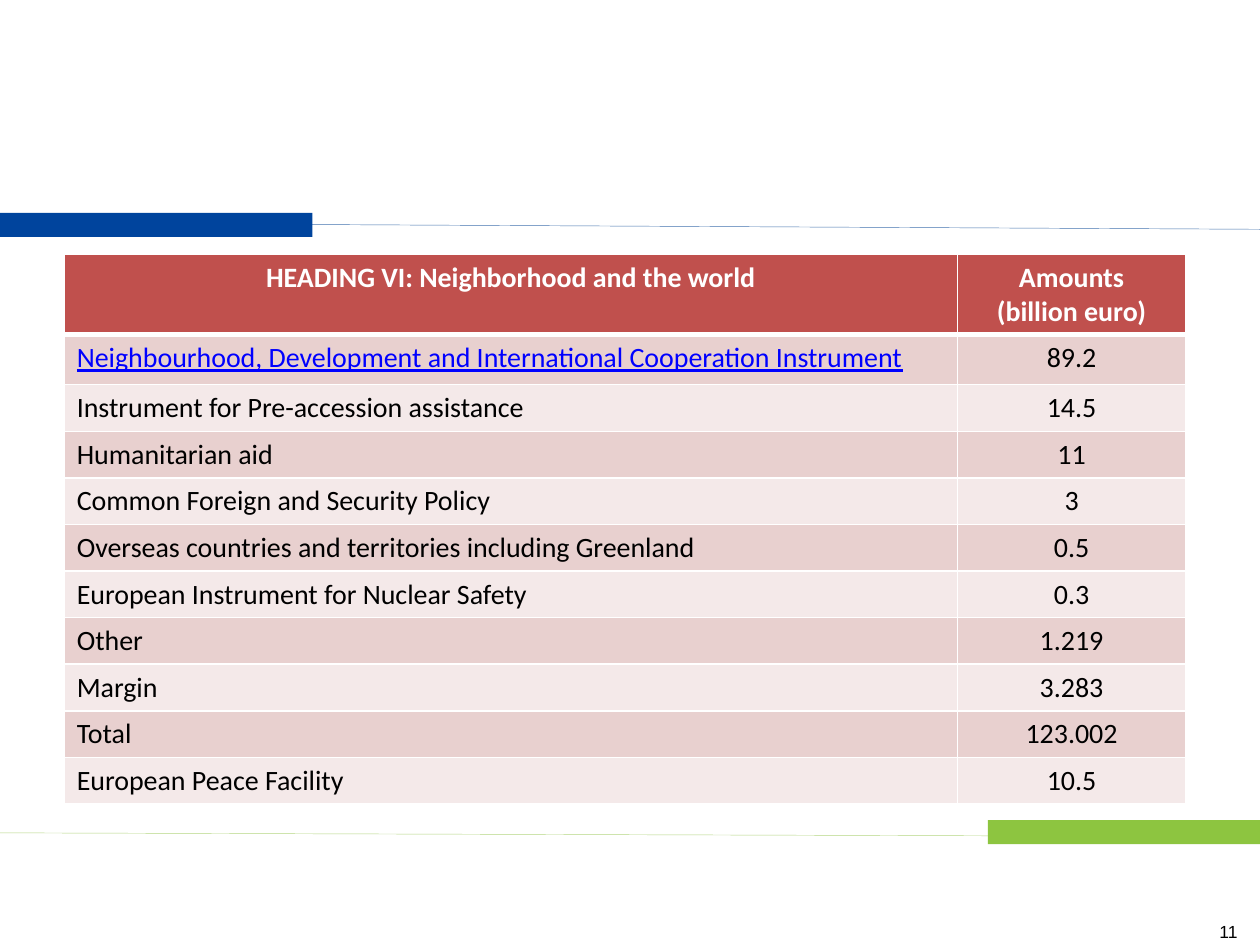
from lxml.etree import SubElement
from pptx import Presentation
from pptx.dml.color import RGBColor
from pptx.enum.shapes import MSO_CONNECTOR, MSO_SHAPE
from pptx.enum.text import PP_ALIGN
from pptx.oxml.ns import qn
from pptx.util import Inches, Pt

WHITE = RGBColor(0xFF, 0xFF, 0xFF)
BLACK = RGBColor(0, 0, 0)
LINK = RGBColor(0, 0, 0xFF)
BLUE = RGBColor(0x00, 0x44, 0x9D)
SKY = RGBColor(0x43, 0x72, 0xAF)
GREEN = RGBColor(0x8D, 0xC5, 0x40)
LIME = RGBColor(0xB5, 0xD7, 0x82)
RED = RGBColor(0xC0, 0x50, 0x4D)
ROSE = RGBColor(0xE8, 0xD0, 0xCF)
PALE = RGBColor(0xF4, 0xE9, 0xE9)

ROWS = [
    ("HEADING VI: Neighborhood and the world", "Amounts\n(billion euro)"),
    ("Neighbourhood, Development and International Cooperation Instrument", "89.2"),
    ("Instrument for Pre-accession assistance", "14.5"),
    ("Humanitarian aid", "11"),
    ("Common Foreign and Security Policy", "3"),
    ("Overseas countries and territories including Greenland", "0.5"),
    ("European Instrument for Nuclear Safety", "0.3"),
    ("Other", "1.219"),
    ("Margin", "3.283"),
    ("Total", "123.002"),
    ("European Peace Facility", "10.5"),
]


def add_edge(cell, side, width):
    edge = SubElement(cell._tc.get_or_add_tcPr(), qn(f"a:ln{side}"), w=str(Pt(width)))
    fill = SubElement(edge, qn("a:solidFill"))
    SubElement(fill, qn("a:srgbClr"), val=str(WHITE))


deck = Presentation()
deck.slide_width = Inches(10)
deck.slide_height = Inches(7.5)
slide = deck.slides.add_slide(deck.slide_layouts[6])
shapes = slide.shapes

RULES = [
    ((0.01, 1.77, 10, 1.82), SKY, (0, 1.69, 2.48, 0.19), BLUE),
    ((10, 6.64, 0, 6.61), LIME, (7.84, 6.51, 2.16, 0.19), GREEN),
]
for ends, tint, area, color in RULES:
    line = shapes.add_connector(MSO_CONNECTOR.STRAIGHT, *map(Inches, ends))
    line.line.color.rgb = tint
    line.line.width = Pt(0.25)
    SubElement(line._element.spPr, qn("a:effectLst"))
    bar = shapes.add_shape(MSO_SHAPE.RECTANGLE, *map(Inches, area))
    bar.shadow.inherit = False
    bar.fill.solid()
    bar.fill.fore_color.rgb = color
    bar.line.fill.background()

box = shapes.add_textbox(Inches(7.59), Inches(7.26), Inches(2.33), Inches(0.2))
box.text_frame.word_wrap = True
number = box.text_frame.paragraphs[0]
number.text = "11"
number.alignment = PP_ALIGN.RIGHT
number.font.size = Pt(10)
number.font.name = "Arial"
number.font.color.rgb = BLACK

frame = shapes.add_table(len(ROWS), 2, Inches(0.51), Inches(2.02), Inches(8.9), Inches(4.33))
table = frame.table
table.columns[0].width = Inches(7.09)
table.columns[1].width = Inches(1.81)

for r, row in enumerate(ROWS):
    table.rows[r].height = Inches({0: 0.63, 1: 0.4}.get(r, 0.37))
    for c, text in enumerate(row):
        cell = table.cell(r, c)
        cell.text = text
        for side in "LRTB":
            thick = (r, side) in [(0, "B"), (1, "T")]
            add_edge(cell, side, 3 if thick else 0.96)
        cell.fill.solid()
        cell.fill.fore_color.rgb = RED if r == 0 else ROSE if r % 2 else PALE
        linked = (r, c) == (1, 0)
        for para in cell.text_frame.paragraphs:
            para.alignment = PP_ALIGN.CENTER if r == 0 or c == 1 else PP_ALIGN.LEFT
            para.font.name = "Calibri"
            para.font.size = Pt(16)
            para.font.bold = r == 0
            para.font.underline = linked
            para.font.color.rgb = WHITE if r == 0 else LINK if linked else BLACK

deck.save("out.pptx")
